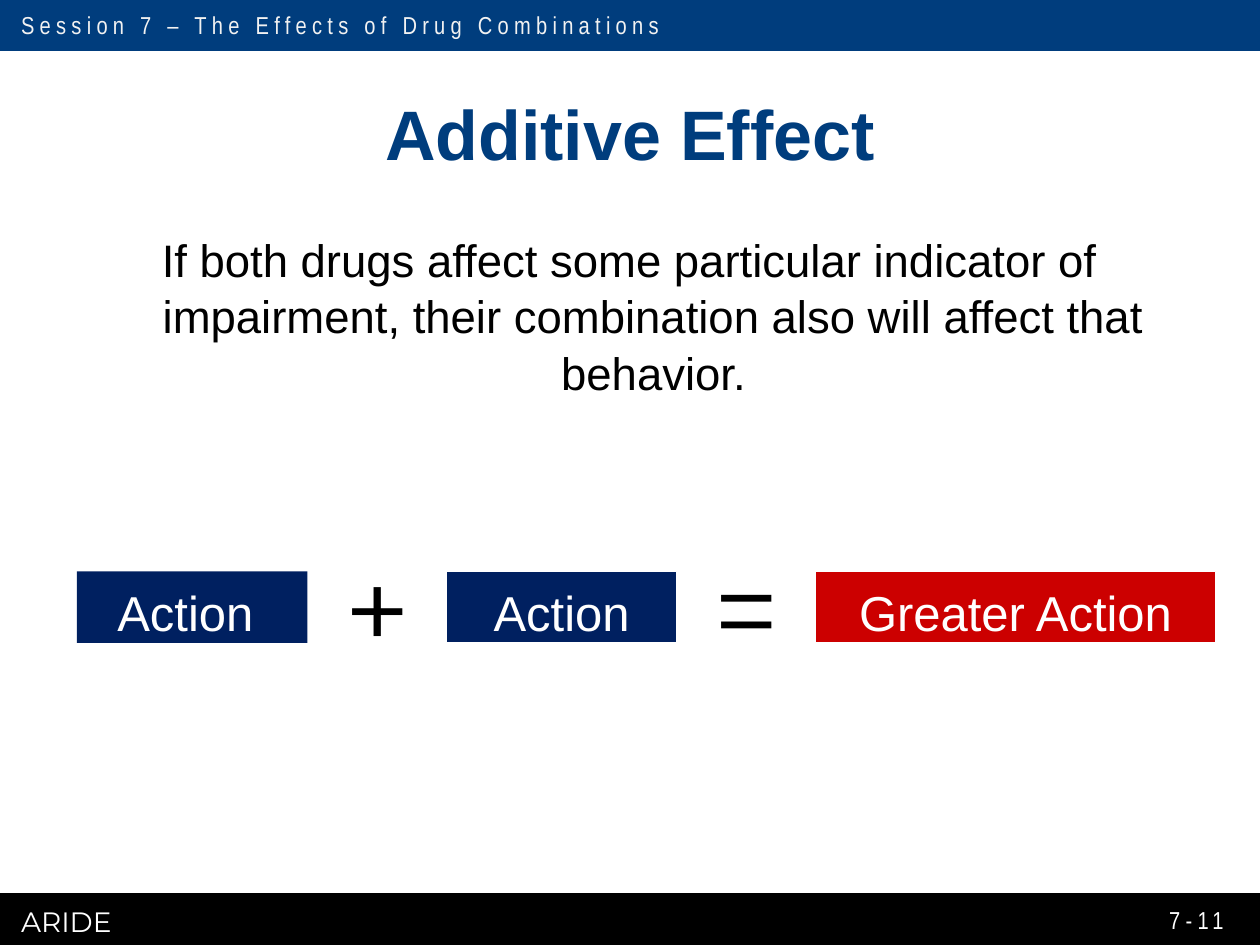
"""Build the Additive Effect slide."""
from dataclasses import dataclass

from pptx import Presentation
from pptx.dml.color import RGBColor
from pptx.enum import shapes, text
from pptx.util import Pt

NAVY, BLACK, WHITE = "003D7D", "000000", "FFFFFF"
LEFT, CENTER, RIGHT = text.PP_ALIGN.LEFT, text.PP_ALIGN.CENTER, text.PP_ALIGN.RIGHT
TOP, MIDDLE = text.MSO_ANCHOR.TOP, text.MSO_ANCHOR.MIDDLE


@dataclass
class Box:
    left: float
    top: float
    width: float
    height: float


@dataclass
class Style:
    size: float
    font: str = "Arial"
    color: str = WHITE
    align: text.PP_ALIGN = CENTER
    anchor: text.MSO_ANCHOR = TOP
    insets: tuple[float, float, float, float] = (7.2, 3.6, 7.2, 3.6)
    bold: bool = False
    tracking: float = 0


@dataclass
class Label:
    words: str
    box: Box
    style: Style


@dataclass
class Block:
    box: Box
    fill: str
    line: str | None = None
    line_width: float = 0.75
    words: str = ""


def rgb(color: str) -> RGBColor:
    """Turn a hex string into a colour."""
    return RGBColor.from_string(color)


def place(shape, box: Box) -> None:
    """Move and size a shape in points."""
    shape.left, shape.top = Pt(box.left), Pt(box.top)
    shape.width, shape.height = Pt(box.width), Pt(box.height)


def write(shape, words: str, style: Style):
    """Fill a shape with one styled paragraph and return the paragraph."""
    frame = shape.text_frame
    frame.text = words
    frame.word_wrap = True
    frame.auto_size = text.MSO_AUTO_SIZE.NONE
    frame.vertical_anchor = style.anchor
    (frame.margin_left, frame.margin_top,
     frame.margin_right, frame.margin_bottom) = map(Pt, style.insets)
    paragraph = frame.paragraphs[0]
    paragraph.alignment = style.align
    for run in paragraph.runs:
        run.font.name, run.font.size = style.font, Pt(style.size)
        run.font.bold = style.bold
        run.font.color.rgb = rgb(style.color)
        if style.tracking:
            run._r.get_or_add_rPr().set("spc", str(int(style.tracking * 100)))
    return paragraph


def add_label(slide, label: Label):
    """Add a text box and return its paragraph."""
    box = label.box
    shape = slide.shapes.add_textbox(
        Pt(box.left), Pt(box.top), Pt(box.width), Pt(box.height))
    return write(shape, label.words, label.style)


def add_block(slide, block: Block) -> None:
    """Add a filled rectangle, with its words if it has any."""
    box = block.box
    shape = slide.shapes.add_shape(
        shapes.MSO_SHAPE.RECTANGLE,
        Pt(box.left), Pt(box.top), Pt(box.width), Pt(box.height))
    shape.shadow.inherit = False
    shape.fill.solid()
    shape.fill.fore_color.rgb = rgb(block.fill)
    if block.line:
        shape.line.color.rgb = rgb(block.line)
        shape.line.width = Pt(block.line_width)
    else:
        shape.line.fill.background()
    if block.words:
        write(shape, block.words, ACTION)


NO_INSETS = (0, 0, 0, 0)
ACTION = Style(28, insets=(7.2, 6.5, 7.2, 0))
OPERATOR = Style(66, "Montserrat", BLACK)
TITLE = Style(40, color=NAVY, anchor=MIDDLE, insets=NO_INSETS, bold=True)
BODY = Style(26, color=BLACK, insets=(0, 1.5, 0, 0))
HEADER = Style(14, "Arial Narrow", "F2F2F2", LEFT, insets=(7.2, 5, 7.2, 0), tracking=3)
COURSE = Style(16, "Montserrat", align=LEFT, insets=(7.2, 4.5, 7.2, 0))
PAGE = Style(14, "Arial Narrow", align=RIGHT, anchor=MIDDLE, tracking=3)

BLOCKS = [
    Block(Box(0, -0.5, 720, 28.8), NAVY, NAVY, 2),
    Block(Box(0, 511.2, 720, 28.8), BLACK, BLACK, 2),
    Block(Box(43.9, 326.5, 131.8, 41), "002060", words="Action "),
    Block(Box(255.2, 326.5, 131.4, 41), "002060", WHITE, words="Action"),
    Block(Box(466, 326.5, 228.6, 41), "CC0000", WHITE, words="Greater Action"),
]
LABELS = [
    Label("Session 7 – The Effects of Drug Combinations", Box(5, 0.7, 530.6, 24.5), HEADER),
    Label("ARIDE", Box(5, 512.6, 411.8, 26.6), COURSE),
    Label("7-11", Box(538.6, 511.2, 167.8, 28.8), PAGE),
    Label("+", Box(180.7, 303.1, 69.8, 87.1), OPERATOR),
    Label("=", Box(391.7, 303.1, 69.8, 87.1), OPERATOR),
]
STATEMENT = Label(
    "If both drugs affect some particular indicator of impairment, "
    "their combination also will affect that behavior.",
    Box(36, 129.6, 648, 116.6), BODY)


def main() -> None:
    """Build and save the presentation."""
    presentation = Presentation()
    presentation.slide_width, presentation.slide_height = Pt(720), Pt(540)
    slide = presentation.slides.add_slide(presentation.slide_layouts[5])
    place(slide.shapes.title, Box(36, 50.4, 648, 50.4))
    write(slide.shapes.title, "Additive Effect", TITLE)
    for block in BLOCKS:
        add_block(slide, block)
    for label in LABELS:
        add_label(slide, label)
    paragraph = add_label(slide, STATEMENT)
    paragraph.line_spacing = 1.04
    paragraph.space_after = Pt(6)
    properties = paragraph._p.get_or_add_pPr()
    properties.set("marL", str(Pt(27)))
    properties.set("indent", str(Pt(-27)))
    presentation.save("out.pptx")


if __name__ == "__main__":
    main()
